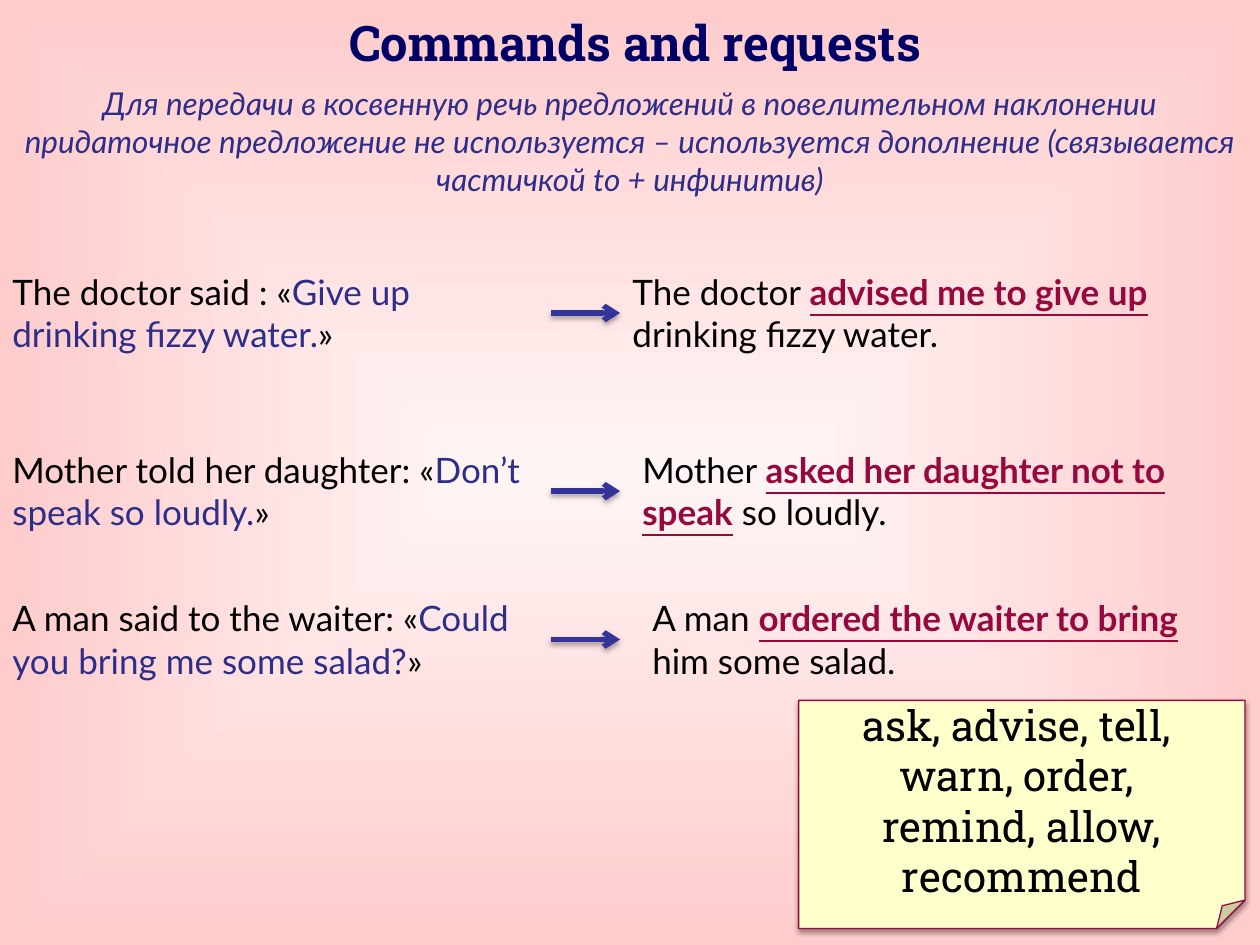
from dataclasses import dataclass

from pptx import Presentation
from pptx.dml.color import RGBColor as Rgb
from pptx.enum.shapes import MSO_CONNECTOR as Connector, MSO_SHAPE as Shape
from pptx.enum.text import MSO_ANCHOR as Anchor, MSO_AUTO_SIZE as AutoSize, PP_ALIGN as Align
from pptx.oxml import parse_xml
from pptx.oxml.ns import nsdecls, qn
from pptx.util import Cm, Pt


@dataclass(frozen=True)
class Theme:
    heading_font: str = "Roboto Slab"
    body_font: str = "Lato"
    title_size: int = 28
    rule_size: int = 18
    example_size: int = 20
    note_size: int = 24
    center: str = "FFF4F4"
    edge: str = "FFCCCC"
    title: str = "000066"
    speech: str = "2D2D8A"
    text: str = "000000"
    reported: str = "96083E"
    arrow: str = "333399"
    note: str = "FFFFCC"


theme = Theme()


def add_text(box, runs, font_name, size, align=Align.LEFT):
    """Fill a text box with one paragraph of (text, colour, font attributes) runs."""
    frame = box.text_frame
    frame.word_wrap = True
    frame.auto_size = AutoSize.SHAPE_TO_FIT_TEXT
    paragraph = frame.paragraphs[0]
    paragraph.alignment = align
    for text, color, attributes in runs:
        run = paragraph.add_run()
        run.text = text
        run.font.name = font_name
        run.font.size = Pt(size)
        run.font.color.rgb = Rgb.from_string(color)
        for attribute in attributes:
            setattr(run.font, attribute, True)


def add_shadow(shape, opacity, distance):
    """Add a soft black shadow falling straight down; call after the line is set."""
    shape.element.spPr.append(parse_xml(
        f'<a:effectLst {nsdecls("a")}><a:outerShdw blurRad="{Pt(3.1)}" '
        f'dist="{Pt(distance)}" dir="5400000" rotWithShape="0"><a:srgbClr val="000000">'
        f'<a:alpha val="{opacity * 1000}"/></a:srgbClr></a:outerShdw></a:effectLst>'))


presentation = Presentation()
presentation.slide_width = Cm(25.4)
presentation.slide_height = Cm(19.05)
slide = presentation.slides.add_slide(presentation.slide_layouts[6])
shapes = slide.shapes

# Background: gradient from the centre to the edges
background = slide.background.fill
background.gradient()
for stop, position, color in zip(background.gradient_stops, (0, 1), (theme.center, theme.edge)):
    stop.position = position
    stop.color.rgb = Rgb.from_string(color)
gradient = next(slide.element.iter(qn("a:gradFill")))
gradient.replace(gradient.find(qn("a:lin")), parse_xml(
    f'<a:path {nsdecls("a")} path="shape">'
    '<a:fillToRect l="50000" t="50000" r="50000" b="50000"/></a:path>'))

# Title and rule
title = shapes.add_textbox(Cm(0.1), Cm(0.13), Cm(25.4), Cm(1.45))
add_text(title, [("Commands and requests", theme.title, ["bold"])],
         theme.heading_font, theme.title_size, Align.CENTER)
rule = shapes.add_textbox(Cm(0), Cm(1.57), Cm(25.4), Cm(2.54))
add_text(rule, [("Для передачи в косвенную речь предложений в повелительном наклонении "
                 "придаточное предложение не используется – используется дополнение "
                 "(связывается частичкой to + инфинитив)", theme.speech, ["italic"])],
         theme.body_font, theme.rule_size, Align.CENTER)

# Examples: direct speech, arrow, reported speech
ROW_HEIGHT = 1.96
ARROW_LEFT, ARROW_RIGHT = 11.1, 12.5
examples = [
    # top, direct width, reported left, reported width, direct parts, reported parts
    (5.33, 11.1, 12.5, 12.9,
     ("The doctor said : «", "Give up drinking fizzy water."),
     ("The doctor ", "advised me to give up ", "drinking fizzy water.")),
    (8.92, 11.5, 12.7, 12.1,
     ("Mother told her daughter: «", "Don’t speak so loudly."),
     ("Mother ", "asked her daughter not to speak", " so loudly.")),
    (11.91, 11.5, 12.9, 11.9,
     ("A man said to the waiter: «", "Could you bring me some salad?"),
     ("A man ", "ordered the waiter to bring ", "him some salad.")),
]
for top, direct_width, left, width, (intro, speech), (subject, command, rest) in examples:
    direct = shapes.add_textbox(Cm(0), Cm(top), Cm(direct_width), Cm(ROW_HEIGHT))
    add_text(direct, [(intro, theme.text, []), (speech, theme.speech, []), ("»", theme.text, [])],
             theme.body_font, theme.example_size)

    reported = shapes.add_textbox(Cm(left), Cm(top), Cm(width), Cm(ROW_HEIGHT))
    add_text(reported, [(subject, theme.text, []),
                        (command, theme.reported, ["bold", "underline"]),
                        (rest, theme.text, [])],
             theme.body_font, theme.example_size)

    middle = Cm(top + ROW_HEIGHT / 2)
    arrow = shapes.add_connector(Connector.STRAIGHT, Cm(ARROW_LEFT), middle,
                                 Cm(ARROW_RIGHT), middle)
    arrow.line.color.rgb = Rgb.from_string(theme.arrow)
    arrow.line.width = Pt(3)
    arrow.element.spPr.find(qn("a:ln")).append(
        parse_xml(f'<a:tailEnd {nsdecls("a")} type="arrow"/>'))
    add_shadow(arrow, opacity=35, distance=1.8)

# Note with the reporting verbs
note = shapes.add_shape(Shape.FOLDED_CORNER, Cm(16.1), Cm(14.12), Cm(9), Cm(4.6))
next(note.element.iter(qn("a:avLst"))).append(
    parse_xml(f'<a:gd {nsdecls("a")} name="adj" fmla="val 12500"/>'))
note.fill.solid()
note.fill.fore_color.rgb = Rgb.from_string(theme.note)
note.line.color.rgb = Rgb.from_string(theme.reported)
note.line.width = Pt(0.75)
add_shadow(note, opacity=38, distance=1.6)
note_frame = note.text_frame
note_frame.word_wrap = False
note_frame.vertical_anchor = Anchor.MIDDLE
note_frame.text = "ask, advise, tell, \nwarn, order, \nremind, allow,\nrecommend"
for paragraph in note_frame.paragraphs:
    paragraph.alignment = Align.CENTER
    font = paragraph.runs[0].font
    font.name = theme.heading_font
    font.size = Pt(theme.note_size)
    font.color.rgb = Rgb.from_string(theme.text)

presentation.save("out.pptx")
